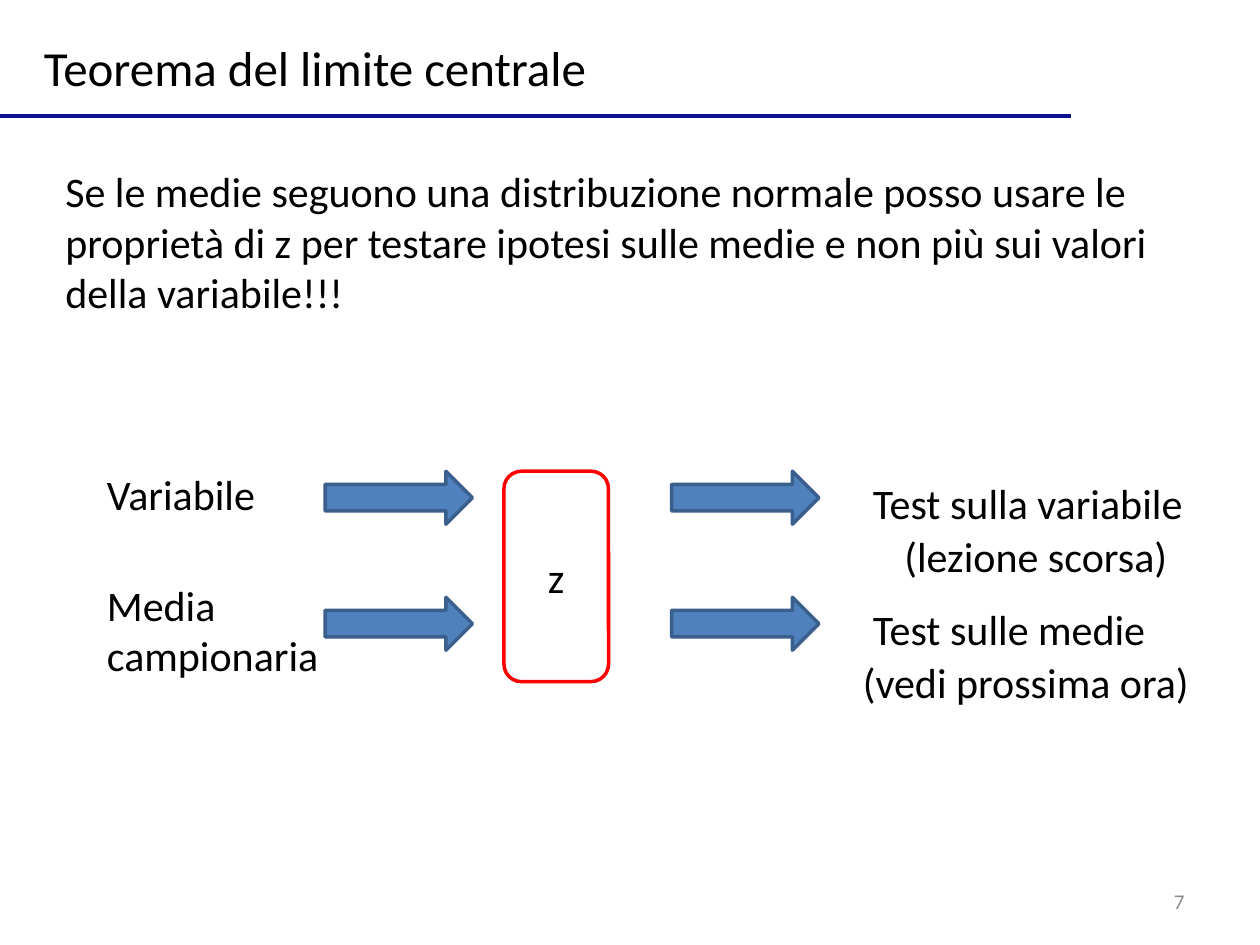
import dataclasses

import lxml.etree
import pptx
import pptx.dml.color
import pptx.enum.shapes
import pptx.enum.text
import pptx.oxml.ns
import pptx.util

Inches = pptx.util.Inches
Shape = pptx.enum.shapes.MSO_SHAPE
Align = pptx.enum.text.PP_ALIGN


@dataclasses.dataclass(frozen=True)
class Theme:
    """Colours, font and sizes of the deck."""

    font: str = "Calibri"
    ink: str = "000000"
    muted: str = "8C8C8C"
    rule: str = "0C1290"
    frame: str = "FF0000"
    arrow: str = "4F81BD"
    arrow_edge: str = "3A5F8C"
    title: int = 28
    body: int = 24
    small: int = 12
    stroke: int = 2


THEME = Theme()


def rgb(value):
    """Turn a hex string into a colour."""
    return pptx.dml.color.RGBColor.from_string(value)


def add_text(page, text, left, top, width, height, *, size=THEME.body,
             color=THEME.ink, align=Align.LEFT, wrap=True):
    """Place one formatted line or paragraph, vertically centred."""
    box = page.shapes.add_textbox(Inches(left), Inches(top), Inches(width), Inches(height))
    frame = box.text_frame
    frame.word_wrap = wrap
    frame.vertical_anchor = pptx.enum.text.MSO_ANCHOR.MIDDLE
    para = frame.paragraphs[0]
    para.alignment = align
    span = para.add_run()
    span.text = text
    span.font.name = THEME.font
    span.font.size = pptx.util.Pt(size)
    span.font.color.rgb = rgb(color)
    return box


def add_outlined(page, kind, left, top, width, height, *, line, fill=None):
    """Place a preset shape with an outline and an optional fill."""
    shape = page.shapes.add_shape(kind, Inches(left), Inches(top), Inches(width), Inches(height))
    shape.shadow.inherit = False
    if fill:
        shape.fill.solid()
        shape.fill.fore_color.rgb = rgb(fill)
    else:
        shape.fill.background()
    shape.line.color.rgb = rgb(line)
    shape.line.width = pptx.util.Pt(THEME.stroke)
    return shape


def add_header(page, left, top, width, height):
    """Place the title with the rule along the bottom of the region."""
    add_text(page, "Teorema del limite centrale", left + 0.25, top + 0.25, 4.55, 0.57,
             size=THEME.title, wrap=False)
    bottom = Inches(top + height)
    rule = page.shapes.add_connector(pptx.enum.shapes.MSO_CONNECTOR.STRAIGHT,
                                     Inches(left), bottom, Inches(left + width), bottom)
    rule.line.color.rgb = rgb(THEME.rule)
    rule.line.width = pptx.util.Pt(THEME.stroke)
    properties = rule._element.spPr
    lxml.etree.SubElement(properties, pptx.oxml.ns.qn("a:effectLst"))


def add_flow(page, left, top):
    """Place the two rows that lead through z to their tests."""
    add_text(page, "Variabile", left, top - 0.07, 1.75, 0.5)
    add_text(page, "Media campionaria", left, top + 0.8, 2.08, 0.91)
    add_text(page, "z", left + 3.5, top + 0.59, 1.75, 0.5)
    add_outlined(page, Shape.ROUNDED_RECTANGLE, left + 3.25, top, 0.83, 1.67, line=THEME.frame)
    rows = [
        ("Test sulla variabile", "(lezione scorsa)", 6.33, 2.5),
        ("Test sulle medie", "(vedi prossima ora)", 6, 3.33),
    ]
    for row, (test, note, note_left, note_width) in enumerate(rows):
        row_top = top + row
        for arrow_left in (1.83, 4.58):
            add_outlined(page, Shape.RIGHT_ARROW, left + arrow_left, row_top, 1.17, 0.42,
                         line=THEME.arrow_edge, fill=THEME.arrow)
        add_text(page, test, left + 6.08, row_top, 3.33, 0.5)
        add_text(page, note, left + note_left, row_top + 0.42, note_width, 0.5)


def main():
    """Build the slide and save the deck."""
    deck = pptx.Presentation()
    deck.slide_width, deck.slide_height = Inches(10), Inches(7.5)
    page = deck.slides.add_slide(deck.slide_layouts[6])
    add_header(page, 0, 0, 8.5, 0.92)
    add_text(page, "Se le medie seguono una distribuzione normale posso usare le "
             "proprietà di z per testare ipotesi sulle medie e non più sui valori "
             "della variabile!!!", 0.42, 1.26, 9.08, 1.31)
    add_flow(page, 0.75, 3.74)
    add_text(page, "7", 7.17, 6.95, 2.33, 0.4, size=THEME.small, color=THEME.muted,
             align=Align.RIGHT)
    deck.save("out.pptx")


if __name__ == "__main__":
    main()
